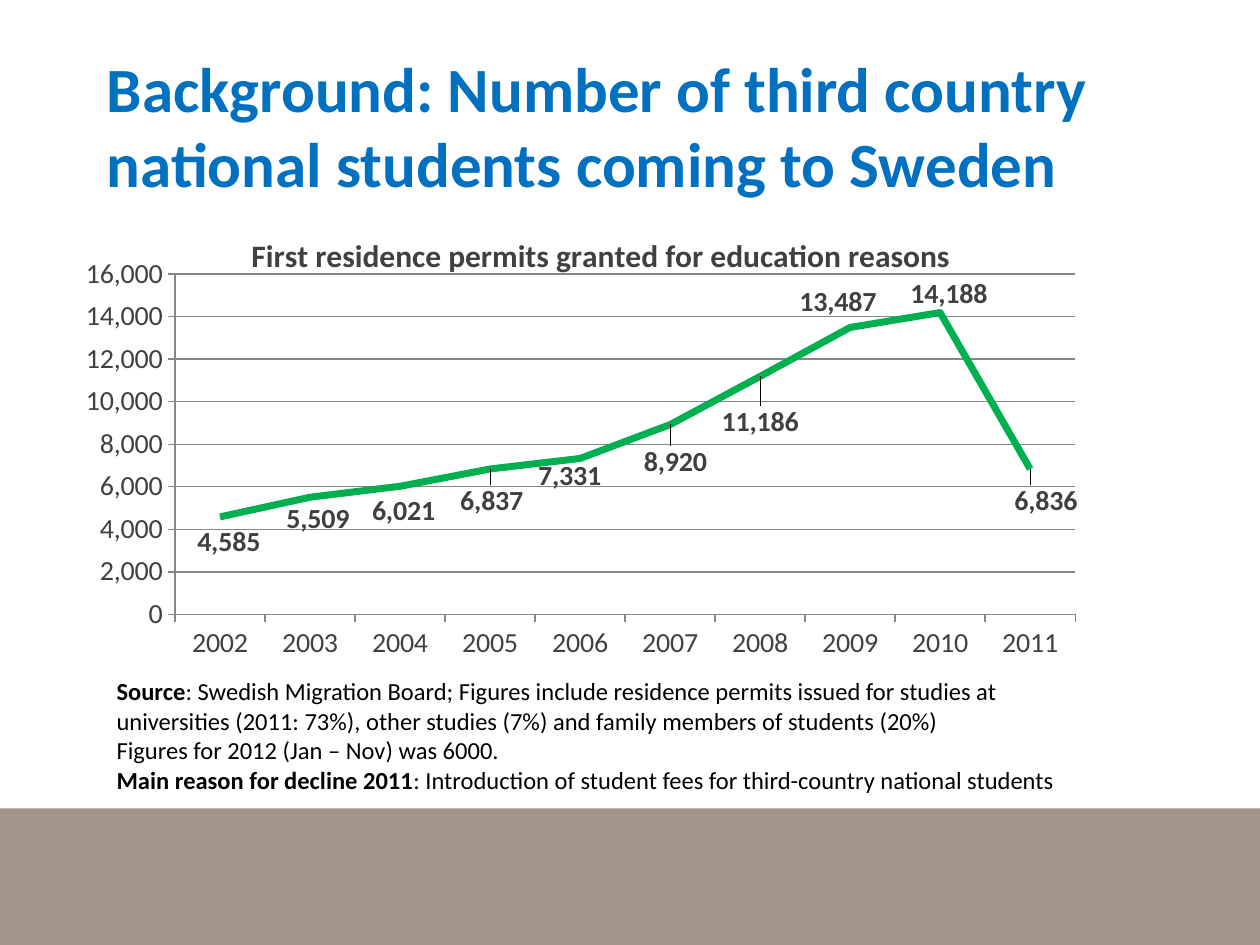
from lxml import etree
from pptx import Presentation
from pptx.chart.data import CategoryChartData
from pptx.dml.color import RGBColor
from pptx.enum.chart import XL_CHART_TYPE, XL_LABEL_POSITION, XL_TICK_MARK
from pptx.enum.shapes import MSO_SHAPE
from pptx.enum.text import MSO_ANCHOR, MSO_AUTO_SIZE
from pptx.oxml.ns import qn
from pptx.util import Pt

RECTANGLE = MSO_SHAPE.RECTANGLE
LINE = XL_CHART_TYPE.LINE
ABOVE, BELOW = XL_LABEL_POSITION.ABOVE, XL_LABEL_POSITION.BELOW
OUTSIDE = XL_TICK_MARK.OUTSIDE
TOP, MIDDLE = MSO_ANCHOR.TOP, MSO_ANCHOR.MIDDLE
GROW, FIXED = MSO_AUTO_SIZE.SHAPE_TO_FIT_TEXT, MSO_AUTO_SIZE.NONE

BLUE = RGBColor(0x00, 0x70, 0xC0)
GREEN = RGBColor(0x00, 0xB0, 0x50)
TAUPE = RGBColor(0xA1, 0x96, 0x89)
CHARCOAL = RGBColor(0x40, 0x40, 0x40)
GRAY = RGBColor(0x87, 0x87, 0x87)
BLACK = RGBColor(0x00, 0x00, 0x00)

PERMITS = [
    ("2002", 4585, BELOW, 5, 2),
    ("2003", 5509, BELOW, 4.5, 0),
    ("2004", 6021, BELOW, 2, 2),
    ("2005", 6837, BELOW, 1, 6),
    ("2006", 7331, BELOW, -6, -2),
    ("2007", 8920, BELOW, 3, 9),
    ("2008", 11186, BELOW, 0, 14),
    ("2009", 13487, ABOVE, -7, -2),
    ("2010", 14188, ABOVE, 5, 2),
    ("2011", 6836, BELOW, 9, 6),
]
NOTES = [
    [("Source", True),
     (": Swedish Migration Board; Figures include residence permits issued for "
      "studies at universities (2011: 73%), other studies (7%) and family "
      "members of students (20%)", False)],
    [("Figures for 2012 (Jan – Nov) was 6000.", False)],
    [("Main reason for decline 2011", True),
     (": Introduction of student fees for third-country national students", False)],
]


class Deck:
    font_name = "Calibri"
    chart_size = 16

    def __init__(self, width, height):
        self.deck = Presentation()
        self.deck.slide_width, self.deck.slide_height = Pt(width), Pt(height)
        self.page = self.deck.slides.add_slide(self.deck.slide_layouts[6])

    def style(self, font, size, color, bold=False):
        font.name, font.size, font.bold = self.font_name, Pt(size), bold
        font.color.rgb = color

    def band(self, left, top, width, height, color):
        shape = self.page.shapes.add_shape(
            RECTANGLE, Pt(left), Pt(top), Pt(width), Pt(height))
        shape.shadow.inherit = False
        shape.fill.solid()
        shape.fill.fore_color.rgb = color
        shape.line.fill.background()

    def text(self, left, top, width, height, paragraphs, size, color,
             anchor=TOP, fit=FIXED):
        box = self.page.shapes.add_textbox(
            Pt(left), Pt(top), Pt(width), Pt(height))
        frame = box.text_frame
        frame.word_wrap, frame.auto_size = True, fit
        frame.vertical_anchor = anchor
        for index, spans in enumerate(paragraphs):
            para = frame.add_paragraph() if index else frame.paragraphs[0]
            for words, bold in spans:
                span = para.add_run()
                span.text = words
                self.style(span.font, size, color, bold)

    def layout(self, parent, index, **settings):
        for old in parent.findall(qn("c:layout")):
            parent.remove(old)
        layout = etree.Element(qn("c:layout"))
        manual = etree.SubElement(layout, qn("c:manualLayout"))
        for name, value in settings.items():
            etree.SubElement(manual, qn(f"c:{name}")).set("val", str(value))
        parent.insert(index, layout)

    def axis(self, axis):
        axis.major_tick_mark = OUTSIDE
        axis.format.line.color.rgb = GRAY
        self.style(axis.tick_labels.font, self.chart_size, CHARCOAL)

    def line_chart(self, left, top, width, height, title, rows, color):
        data = CategoryChartData(number_format="#,##0")
        data.categories = [row[0] for row in rows]
        data.add_series("Series 1", [row[1] for row in rows])
        chart = self.page.shapes.add_chart(
            LINE, Pt(left), Pt(top), Pt(width), Pt(height), data).chart
        self.style(chart.font, 10, BLACK)
        chart.font.name = "Arial"
        chart.has_legend = False

        chart.has_title = True
        span = chart.chart_title.text_frame.paragraphs[0].add_run()
        span.text = title
        self.style(span.font, 18, CHARCOAL, True)
        self.layout(chart.element.xpath("c:chart/c:title")[0], 1,
                    xMode="edge", yMode="edge", x=0.16, y=0.03)
        self.layout(chart.element.xpath("c:chart/c:plotArea")[0], 0,
                    layoutTarget="inner", xMode="edge", yMode="edge",
                    x=0.09, y=0.135, w=0.89, h=0.77)

        self.axis(chart.category_axis)
        self.axis(chart.value_axis)
        values = chart.value_axis
        values.minimum_scale, values.maximum_scale = 0, 16000
        values.major_unit = 2000
        values.tick_labels.number_format = "#,##0"
        values.tick_labels.number_format_is_linked = False
        values.has_major_gridlines = True
        values.major_gridlines.format.line.color.rgb = GRAY

        plot = chart.plots[0]
        plot.vary_by_categories = False
        series = plot.series[0]
        series.smooth = False
        series.format.line.color.rgb = color
        series.format.line.width = Pt(4)
        series.data_labels.show_value = True
        self.style(series.data_labels.font, self.chart_size, CHARCOAL, True)
        for index, (_, _, position, _, _) in enumerate(rows):
            label = series.points[index].data_label
            self.style(label.font, self.chart_size, CHARCOAL, True)
            label.position = position
        for label, row in zip(chart.element.xpath(".//c:dLbl"), rows):
            self.layout(label, 1, x=round(row[3] / width, 4),
                        y=round(row[4] / height, 4))


def main():
    slide = Deck(720, 540)
    slide.band(0, 462, 720, 78, TAUPE)
    slide.text(54, 31.5, 612, 79.5,
               [[("Background: Number of third country national students "
                  "coming to Sweden", True)]], 36, BLUE, MIDDLE)
    slide.line_chart(48, 122.5, 578, 255,
                     "First residence permits granted for education reasons",
                     PERMITS, GREEN)
    slide.text(59.5, 383, 585.5, 75, NOTES, 14, BLACK, fit=GROW)
    slide.deck.save("out.pptx")


if __name__ == "__main__":
    main()
